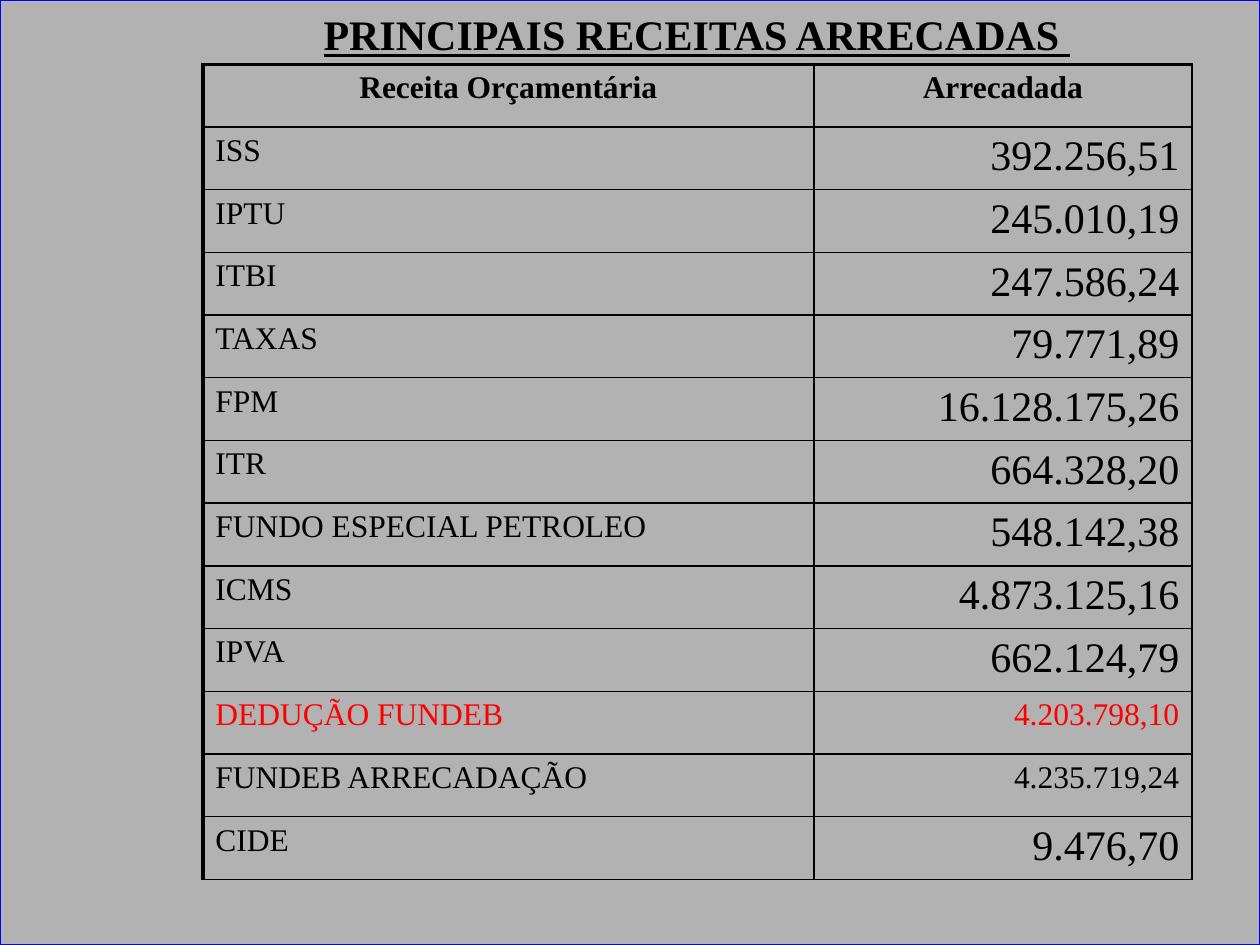
from dataclasses import dataclass

from lxml.etree import SubElement
from pptx import Presentation
from pptx.dml.color import RGBColor
from pptx.enum.shapes import MSO_SHAPE
from pptx.enum.text import MSO_ANCHOR, MSO_AUTO_SIZE, PP_ALIGN
from pptx.oxml.ns import qn
from pptx.util import Inches, Pt


@dataclass(frozen=True)
class Theme:
    font: str = "Times New Roman"
    text: str = "000000"
    deduction: str = "FF0000"
    background: str = "B2B2B2"
    frame: str = "0000FF"
    border: str = "000000"
    large: int = 24
    normal: int = 18
    thick: float = 2.25
    thin: float = 1


THEME = Theme()
TITLE = "PRINCIPAIS RECEITAS ARRECADAS "
HEADERS = ("Receita Orçamentária", "Arrecadada")
REVENUES = [
    ("ISS", "392.256,51"),
    ("IPTU", "245.010,19"),
    ("ITBI", "247.586,24"),
    ("TAXAS", "79.771,89"),
    ("FPM", "16.128.175,26"),
    ("ITR", "664.328,20"),
    ("FUNDO ESPECIAL PETROLEO", "548.142,38"),
    ("ICMS", "4.873.125,16"),
    ("IPVA", "662.124,79"),
    ("DEDUÇÃO FUNDEB", "4.203.798,10"),
    ("FUNDEB ARRECADAÇÃO", "4.235.719,24"),
    ("CIDE", "9.476,70"),
]
COLUMN_WIDTHS = (4.85, 3)
TABLE_HEIGHT = 6.47


def write_text(text_frame, text, size, align, color=THEME.text, bold=False, underline=False):
    text_frame.text = text
    paragraph = text_frame.paragraphs[0]
    paragraph.alignment = align
    font = paragraph.runs[0].font
    font.name = THEME.font
    font.size = Pt(size)
    font.bold = bold
    font.underline = underline
    font.color.rgb = RGBColor.from_string(color)


def add_background(slide, width, height):
    panel = slide.shapes.add_shape(MSO_SHAPE.RECTANGLE, 0, 0, width, height)
    panel.shadow.inherit = False
    panel.fill.solid()
    panel.fill.fore_color.rgb = RGBColor.from_string(THEME.background)
    panel.line.color.rgb = RGBColor.from_string(THEME.frame)
    panel.line.width = Pt(0.75)


def set_borders(cell, left, top):
    """Draw all four cell borders; right and bottom are always thin."""
    properties = cell._tc.get_or_add_tcPr()
    widths = {"a:lnL": left, "a:lnR": THEME.thin, "a:lnT": top, "a:lnB": THEME.thin}
    for position, (tag, width) in enumerate(widths.items()):
        line = SubElement(properties, qn(tag), w=str(Pt(width)))
        fill = SubElement(line, qn("a:solidFill"))
        SubElement(fill, qn("a:srgbClr"), val=THEME.border)
        properties.insert(position, line)


def fill_row(table, row, texts, sizes, aligns, color=THEME.text, bold=False):
    for column, (text, size, align) in enumerate(zip(texts, sizes, aligns)):
        cell = table.cell(row, column)
        write_text(cell.text_frame, text, size, align, color, bold)
        cell.vertical_anchor = MSO_ANCHOR.TOP
        cell.fill.background()
        set_borders(
            cell,
            left=THEME.thin if column else THEME.thick,
            top=THEME.thin if row else THEME.thick,
        )


def add_revenue_table(slide):
    row_count = len(REVENUES) + 1
    table = slide.shapes.add_table(
        row_count, len(HEADERS), Inches(1.61), Inches(0.51),
        Inches(sum(COLUMN_WIDTHS)), Inches(TABLE_HEIGHT),
    ).table
    table.first_row = False
    table.horz_banding = False
    for column, width in zip(table.columns, COLUMN_WIDTHS):
        column.width = Inches(width)
    for row in table.rows:
        row.height = Inches(TABLE_HEIGHT / row_count)

    fill_row(table, 0, HEADERS, (THEME.normal,) * 2, (PP_ALIGN.CENTER,) * 2, bold=True)
    for row, revenue in enumerate(REVENUES, start=1):
        name = revenue[0]
        amount_size = THEME.normal if "FUNDEB" in name else THEME.large
        color = THEME.deduction if name.startswith("DEDUÇÃO") else THEME.text
        fill_row(
            table, row, revenue, (THEME.normal, amount_size),
            (PP_ALIGN.LEFT, PP_ALIGN.RIGHT), color,
        )


def place_title(slide):
    """Format the title placeholder and bring it in front of the background."""
    title = slide.shapes.title
    title.left, title.top = Inches(1.06), Inches(-0.01)
    title.width, title.height = Inches(8.94), Inches(1.1)
    text_frame = title.text_frame
    text_frame.word_wrap = True
    text_frame.auto_size = MSO_AUTO_SIZE.NONE
    text_frame.vertical_anchor = MSO_ANCHOR.TOP
    text_frame.margin_top = Inches(0.08)
    write_text(text_frame, TITLE, THEME.large, PP_ALIGN.CENTER, bold=True, underline=True)
    title.element.getparent().append(title.element)


def main():
    presentation = Presentation()
    presentation.slide_width = Inches(10)
    presentation.slide_height = Inches(7.5)
    slide = presentation.slides.add_slide(presentation.slide_layouts[5])
    add_background(slide, presentation.slide_width, presentation.slide_height)
    add_revenue_table(slide)
    place_title(slide)
    presentation.save("out.pptx")


if __name__ == "__main__":
    main()
